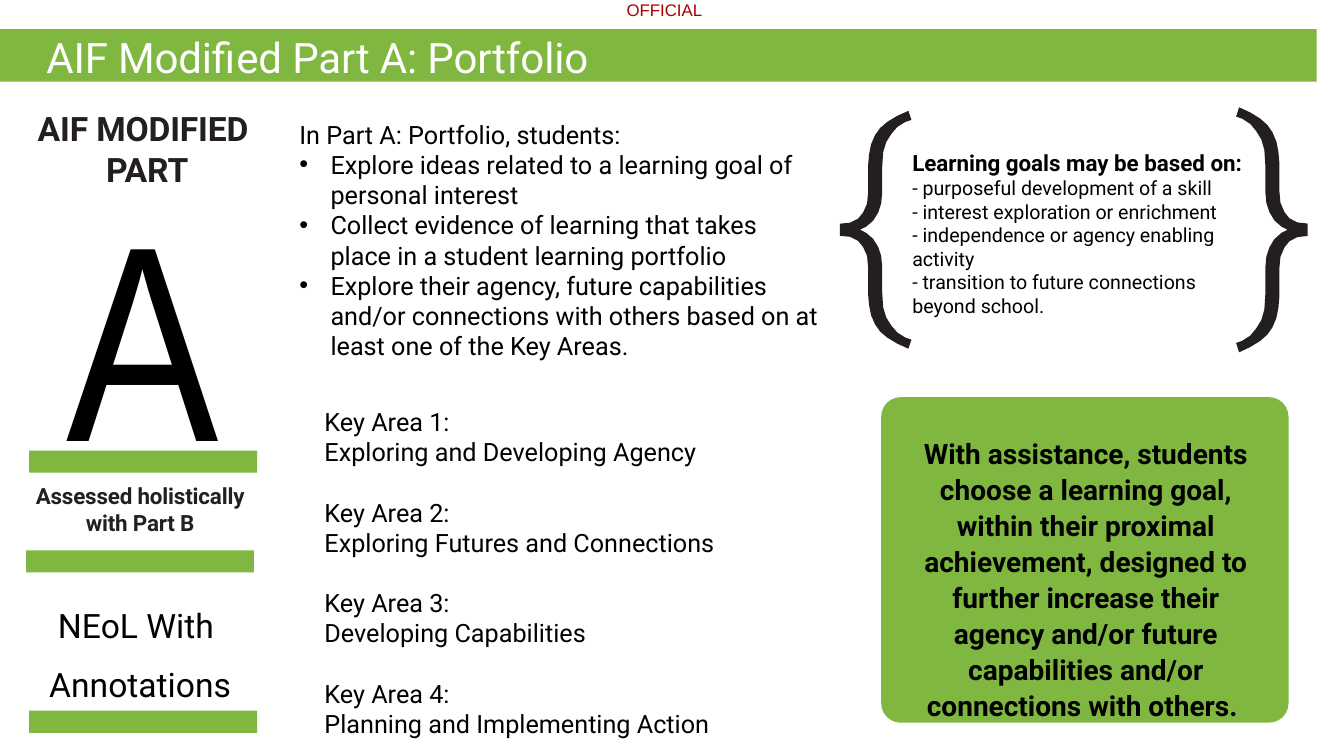
import pptx
import pptx.util
import pptx.dml.color
import pptx.enum.shapes
import pptx.enum.text
from lxml import etree

Inches, Pt = pptx.util.Inches, pptx.util.Pt
RGB = pptx.dml.color.RGBColor
SHAPE = pptx.enum.shapes.MSO_SHAPE
CENTER = pptx.enum.text.PP_ALIGN.CENTER
TOP = pptx.enum.text.MSO_ANCHOR.TOP

GREEN = RGB(0x80, 0xB7, 0x40)
DARK = RGB(0x23, 0x1F, 0x20)
BLACK = RGB(0, 0, 0)
WHITE = RGB(255, 255, 255)
RED = RGB(0xA8, 0, 0)

# Content
TITLE = "AIF Modified Part A: Portfolio"
INTRO = "In Part A: Portfolio, students:"
TASKS = [
    "Explore ideas related to a learning goal of personal interest",
    "Collect evidence of learning that takes place in a student learning portfolio",
    "Explore their agency, future capabilities and/or connections with others "
    "based on at least one of the Key Areas.",
]
AREAS = [
    "Exploring and Developing Agency",
    "Exploring Futures and Connections",
    "Developing Capabilities",
    "Planning and Implementing Action",
]
HEAD = "Learning goals may be based on: "
GOALS = [
    "- purposeful development of a skill",
    "- interest exploration or enrichment",
    "- independence or agency enabling activity",
    "- transition to future connections beyond school.",
]
HELP = ("With assistance, students choose a learning goal, within their proximal "
        "achievement, designed to further increase their agency and/or future "
        "capabilities and/or connections with others. ")

# Formats: font values, then paragraph values
BODY = {"name": "Roboto", "size": Pt(18), "color": BLACK}
SMALL = BODY | {"size": Pt(14)}
LEAD = BODY | {"size": Pt(16), "bold": True}
BIG = BODY | {"size": Pt(24)}
STRONG = BODY | {"size": Pt(20), "bold": True}
PART = BIG | {"bold": True, "color": DARK, "track": -10}
NOTE = PART | {"size": Pt(16)}
BANNER = BODY | {"size": Pt(30), "color": WHITE, "track": -10}
MARK = BODY | {"name": "Arial", "size": Pt(12), "color": RED}
LETTER = BODY | {"name": "Arial Narrow", "size": Pt(199)}

MID = {"alignment": CENTER}
SNUG = MID | {"space_before": Pt(0.7)}
WIDE = MID | {"line_spacing": Pt(42.5)}
LOOSE = MID | {"line_spacing": 1.07, "space_before": Pt(6)}
GAP = {"space_before": Pt(21.6)}

# Bars: left, top; all the same size
BARS = [(0.29, 4.47), (0.26, 5.46), (0.29, 7.05)]
BAR = (2.26, 0.22)

# Upper half of a brace, measured from the middle of its tip
OUTER = [(0.68, -1.18), (0.57, -1.13), (0.47, -1.07), (0.4, -1.01), (0.35, -0.94),
         (0.31, -0.85), (0.29, -0.75), (0.28, -0.64), (0.28, -0.37), (0.27, -0.26),
         (0.23, -0.17), (0.18, -0.11), (0.1, -0.07), (0, -0.06)]
INNER = [(0.2, 0), (0.26, -0.03), (0.33, -0.09), (0.38, -0.17), (0.41, -0.26),
         (0.42, -0.37), (0.42, -0.62), (0.43, -0.77), (0.46, -0.87), (0.51, -0.95),
         (0.57, -1.02), (0.65, -1.07), (0.71, -1.09)]
# Tip, direction, height factor
BRACES = [(8.33, 1, 1), (12.97, -1, 1.03)]
AXIS = 2.28

deck = pptx.Presentation()
deck.slide_width, deck.slide_height = Inches(13.33), Inches(7.5)
slide = deck.slides.add_slide(deck.slide_layouts[6])
shapes = slide.shapes


def paint(shape, color):
    shape.shadow.inherit = False
    shape.fill.solid()
    shape.fill.fore_color.rgb = color
    shape.line.fill.background()
    return shape


def block(kind, box, color=GREEN):
    return paint(shapes.add_shape(kind, *map(Inches, box)), color)


def write(shape, lines, inset=None):
    """Each line is (text, font values, paragraph values)."""
    frame = shape.text_frame
    frame.word_wrap = True
    frame.vertical_anchor = TOP
    if inset:
        for side, size in zip(("left", "top", "right", "bottom"), inset):
            setattr(frame, "margin_" + side, Inches(size))
    for i, (text, font, form) in enumerate(lines):
        para = frame.paragraphs[0] if i == 0 else frame.add_paragraph()
        for key, value in form.items():
            setattr(para, key, value)
        run = para.add_run()
        run.text = text
        for key, value in font.items():
            if key == "color":
                run.font.color.rgb = value
            elif key == "track":
                run.font._element.set("spc", str(value))
            else:
                setattr(run.font, key, value)
    return frame


def label(box, lines, inset=None):
    return write(shapes.add_textbox(*map(Inches, box)), lines, inset)


def bullet(para):
    props = para._p.get_or_add_pPr()
    props.set("marL", str(Inches(0.31)))
    props.set("indent", str(-Inches(0.31)))
    tag = pptx.oxml.ns.qn
    etree.SubElement(props, tag("a:buFont")).set("typeface", "Arial")
    etree.SubElement(props, tag("a:buChar")).set("char", "•")


def brace(tip, way, tall):
    flip = [[(x, -y) for x, y in reversed(edge)] for edge in (OUTER, INNER)]
    ring = [(Inches(tip + way * x), Inches(AXIS + tall * y))
            for x, y in OUTER + flip[0] + flip[1] + INNER]
    pen = shapes.build_freeform(*ring[0])
    pen.add_line_segments(ring[1:], close=True)
    paint(pen.convert_to_shape(), DARK)


# Marking and banner
label((6.19, 0, 0.8, 0.2), [("OFFICIAL", MARK, MID)], (0, 0, 0, 0))
write(block(SHAPE.RECTANGLE, (0, 0.29, 13.06, 0.52)),
      [(TITLE, BANNER, {"alignment": pptx.enum.text.PP_ALIGN.LEFT,
                        "space_before": Pt(1.4)})], (0.46, 0.02, 0, 0))

# Left column
label((0.27, 1.57, 2.28, 3.45), [("A", LETTER, MID)])
label((0.34, 1.06, 2.24, 0.83),
      [("AIF MODIFIED ", PART, SNUG), ("PART", PART, SNUG)], (0, 0.01, 0, 0))
for spot in BARS:
    block(SHAPE.RECTANGLE, spot + BAR)
label((0.23, 4.77, 2.32, 0.55),
      [("Assessed holistically with Part B", NOTE, SNUG)], (0, 0.01, 0, 0))
label((0.26, 5.76, 2.26, 1.22),
      [("NEoL With ", BIG, WIDE), ("Annotations", BIG, WIDE)])

# Middle column
tasks = label((2.87, 1.13, 5.35, 2.52),
              [(text, BODY, {}) for text in [INTRO] + TASKS])
for para in tasks.paragraphs[1:]:
    bullet(para)
areas = []
for i, name in enumerate(AREAS):
    areas += [(f"Key Area {i + 1}:", BODY, GAP if i else {}), (name, BODY, {})]
label((3.12, 3.98, 5.1, 3.74), areas)

# Right column
for item in BRACES:
    brace(*item)
label((8.95, 1.43, 3.62, 1.78),
      [(HEAD, LEAD, {})] + [(text, SMALL, {}) for text in GOALS])
panel = block(SHAPE.ROUNDED_RECTANGLE, (8.74, 3.94, 4.04, 3.23))
panel.adjustments[0] = 0.06
label((8.97, 4.26, 3.6, 2.61), [(HELP, STRONG, LOOSE)])

deck.save("out.pptx")
